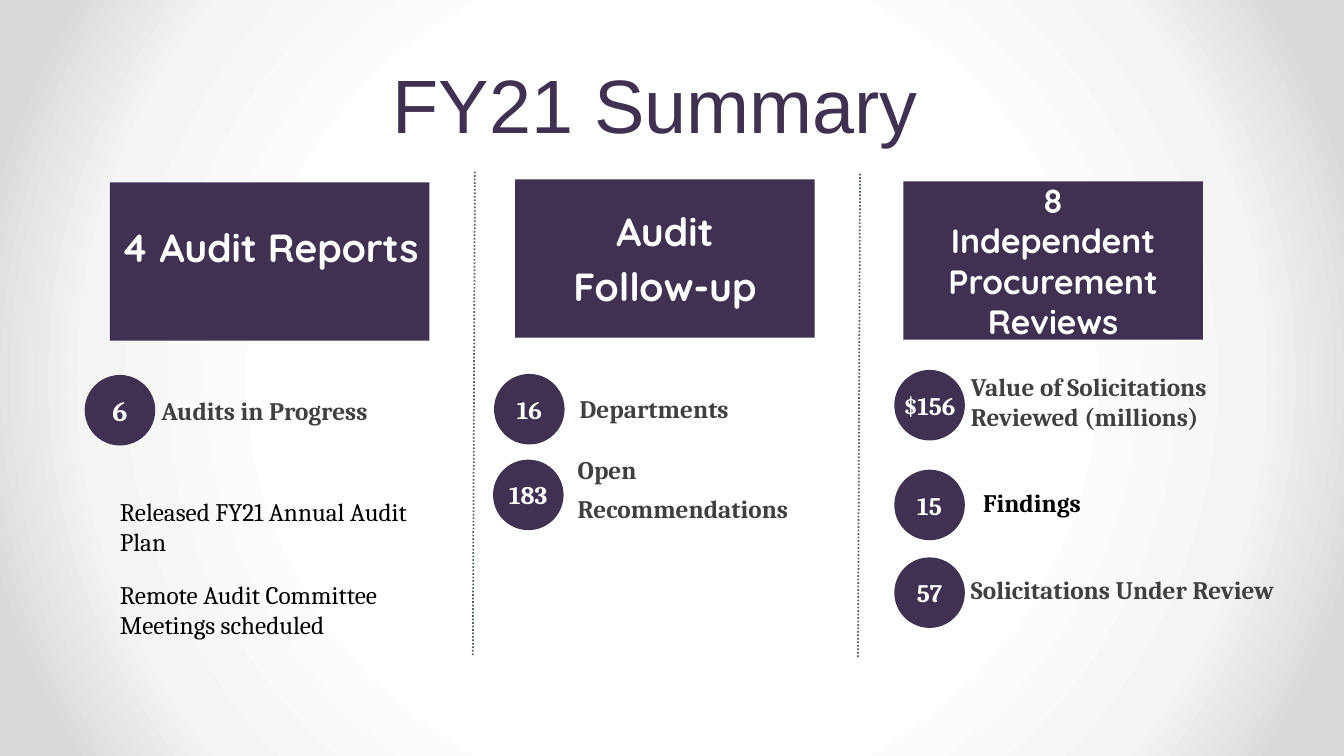
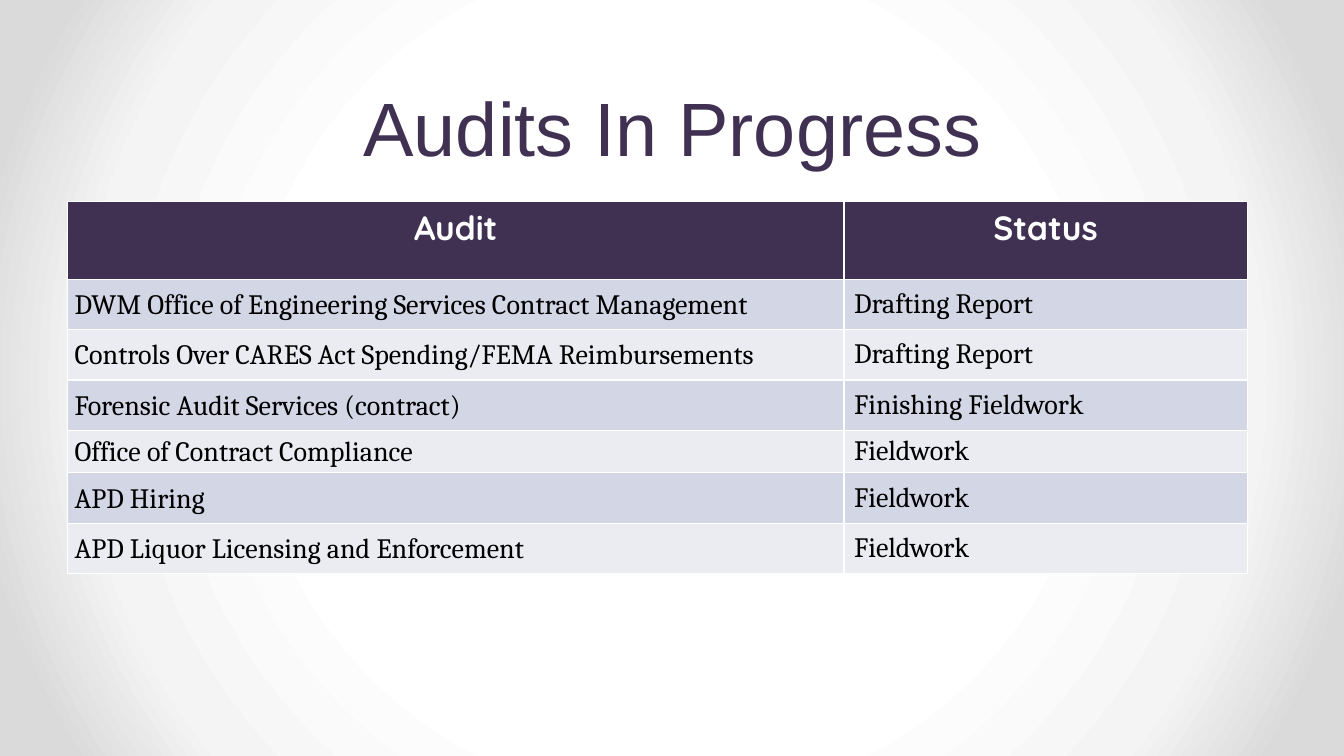
from lxml import etree
from pptx import Presentation
from pptx.dml.color import RGBColor
from pptx.enum.dml import MSO_LINE
from pptx.enum.shapes import MSO_CONNECTOR, MSO_SHAPE
from pptx.enum.text import MSO_ANCHOR, MSO_AUTO_SIZE, PP_ALIGN
from pptx.oxml import parse_xml
from pptx.oxml.ns import nsdecls, qn
from pptx.util import Inches, Pt

COLOURS = {
    "purple": "403152",
    "white": "FFFFFF",
    "black": "000000",
    "grey": "404040",
    "divider": "586064",
    "band_dark": "D2D6E5",
    "band_light": "EAECF2",
}
BACKGROUND_STOPS = [(50, "FFFFFF"), (76, "F4F4F4"), (92, "DADADA")]
TITLE_FONT, HEADING_FONT, BODY_FONT = "Arial", "Quicksand", "Cambria"
CIRCLE_SIZE = 0.7

HEADINGS = [
    (["4 Audit Reports"], 1.09, 1.81, 3.17, 28, 6, 0.35),
    (["Audit", "Follow-up"], 5.11, 1.78, 2.97, 28, 6, 0.05),
    (["8", "Independent Procurement Reviews"], 8.96, 1.8, 2.97, 24, 0, 0.05),
]
FIGURES = [
    ("6", 0.84, 3.72, 20),
    ("16", 4.9, 3.71, 18),
    ("183", 4.89, 4.56, 18),
    ("$156", 8.87, 3.67, 18),
    ("15", 8.87, 4.66, 18),
    ("57", 8.87, 5.53, 18),
]
LABELS = [
    (["Audits in Progress"], 1.6, 3.92, 2.97, 0.3, "grey", True),
    (["Departments"], 5.75, 3.76, 2.29, 0.58, "grey", True),
    (["Open", "Recommendations"], 5.73, 4.56, 2.29, 0.58, "grey", True),
    (["Value of Solicitations Reviewed (millions)"], 9.63, 3.68, 3.2, 0.61, "grey", True),
    (["Findings"], 9.75, 4.78, 1.38, 0.4, "black", True),
    (["Solicitations Under Review"], 9.63, 5.7, 3.2, 0.3, "grey", True),
    (["Released FY21 Annual Audit Plan"], 1.19, 4.87, 2.97, 0.71, "black", False),
    (["Remote Audit Committee Meetings scheduled"], 1.19, 5.69, 2.97, 0.71, "black", False),
]
DIVIDERS = [(4.69, 6.5), (8.51, 6.52)]

AUDITS = [
    ("Audit", "Status"),
    ("DWM Office of Engineering Services Contract Management", "Drafting Report"),
    ("Controls Over CARES Act Spending/FEMA Reimbursements", "Drafting Report"),
    ("Forensic Audit Services (contract)", "Finishing Fieldwork"),
    ("Office of Contract Compliance", "Fieldwork"),
    ("APD Hiring", "Fieldwork"),
    ("APD Liquor Licensing and Enforcement", "Fieldwork"),
]
COLUMN_WIDTHS = [7.7, 4]
ROW_HEIGHTS = [0.77, 0.5, 0.5, 0.5, 0.4, 0.5, 0.5]


def colour(name):
    return RGBColor.from_string(COLOURS[name])


def box(left, top, width, height):
    return Inches(left), Inches(top), Inches(width), Inches(height)


def set_margins(target, left, top, right, bottom):
    target.margin_left, target.margin_top = Inches(left), Inches(top)
    target.margin_right, target.margin_bottom = Inches(right), Inches(bottom)


def write_lines(frame, lines, font_name, size, colour_name, bold=False,
                alignment=PP_ALIGN.LEFT, space_before=0):
    for index, line in enumerate(lines):
        paragraph = frame.add_paragraph() if index else frame.paragraphs[0]
        paragraph.text = line
        paragraph.alignment = alignment
        paragraph.space_before = Pt(space_before)
        font = paragraph.font
        font.name, font.size, font.bold = font_name, Pt(size), bold
        font.color.rgb = colour(colour_name)


def set_background(master):
    fill = master.background.fill
    fill.solid()
    solid = master.element.find(".//" + qn("p:bgPr")).find(qn("a:solidFill"))
    stops = "".join(
        f'<a:gs pos="{position * 1000}"><a:srgbClr val="{value}"/></a:gs>'
        for position, value in BACKGROUND_STOPS
    )
    gradient = parse_xml(
        f'<a:gradFill {nsdecls("a")} rotWithShape="1"><a:gsLst>{stops}</a:gsLst>'
        '<a:path path="circle"><a:fillToRect l="50000" t="50000" r="50000" b="50000"/>'
        "</a:path></a:gradFill>"
    )
    solid.getparent().replace(solid, gradient)


def add_titled_slide(presentation, title, left, top, width, height):
    slide = presentation.slides.add_slide(presentation.slide_layouts[5])
    shape = slide.shapes.title
    shape.left, shape.top, shape.width, shape.height = box(left, top, width, height)
    frame = shape.text_frame
    frame.auto_size = MSO_AUTO_SIZE.NONE
    frame.vertical_anchor = MSO_ANCHOR.BOTTOM
    write_lines(frame, [title], TITLE_FONT, 54, "purple", alignment=PP_ALIGN.CENTER)
    frame.paragraphs[0].line_spacing = Pt(58)
    return slide


def add_purple_shape(slide, kind, left, top, width, height):
    shape = slide.shapes.add_shape(kind, *box(left, top, width, height))
    shape.shadow.inherit = False
    shape.fill.solid()
    shape.fill.fore_color.rgb = colour("purple")
    shape.line.fill.background()
    shape.text_frame.vertical_anchor = MSO_ANCHOR.MIDDLE
    return shape


def add_heading(slide, lines, left, top, width, size, space_before, bottom_margin):
    shape = add_purple_shape(slide, MSO_SHAPE.RECTANGLE, left, top, width, 1.57)
    frame = shape.text_frame
    frame.word_wrap = True
    set_margins(frame, 0.1, 0.05, 0.1, bottom_margin)
    write_lines(frame, lines, HEADING_FONT, size, "white", True,
                PP_ALIGN.CENTER, space_before)


def add_figure(slide, figure, left, top, size):
    shape = add_purple_shape(slide, MSO_SHAPE.OVAL, left, top, CIRCLE_SIZE, CIRCLE_SIZE)
    frame = shape.text_frame
    frame.word_wrap = False
    set_margins(frame, 0, 0, 0, 0)
    write_lines(frame, [figure], BODY_FONT, size, "white", True, PP_ALIGN.CENTER)


def add_label(slide, lines, left, top, width, height, colour_name, bold):
    frame = slide.shapes.add_textbox(*box(left, top, width, height)).text_frame
    frame.word_wrap = True
    frame.vertical_anchor = MSO_ANCHOR.MIDDLE
    set_margins(frame, 0, 0, 0, 0)
    write_lines(frame, lines, BODY_FONT, 18, colour_name, bold, space_before=6)


def add_divider(slide, left, bottom):
    connector = slide.shapes.add_connector(
        MSO_CONNECTOR.STRAIGHT, Inches(left), Inches(bottom),
        Inches(left + 0.02), Inches(bottom - 4.8))
    connector.line.color.rgb = colour("divider")
    connector.line.width = Pt(1.25)
    connector.line.dash_style = MSO_LINE.ROUND_DOT
    etree.SubElement(connector.element.spPr, qn("a:effectLst"))


def format_cell(cell, text, row, column):
    header = row == 0
    fill_name = "purple" if header else "band_dark" if row % 2 else "band_light"
    cell.fill.solid()
    cell.fill.fore_color.rgb = colour(fill_name)
    if header:
        write_lines(cell.text_frame, [text], HEADING_FONT, 24, "white", True,
                    PP_ALIGN.CENTER)
        return
    cell.vertical_anchor = MSO_ANCHOR.MIDDLE
    write_lines(cell.text_frame, [text], BODY_FONT, 20, "black")
    if column == 0:
        set_margins(cell, 0.07, 0, 0.07, 0)
        cell.text_frame.paragraphs[0].line_spacing = 1.07


def add_audit_table(slide):
    frame = slide.shapes.add_table(
        len(AUDITS), len(COLUMN_WIDTHS),
        *box(0.67, 2, sum(COLUMN_WIDTHS), sum(ROW_HEIGHTS)))
    table = frame.table
    for column, width in zip(table.columns, COLUMN_WIDTHS):
        column.width = Inches(width)
    for row, height in zip(table.rows, ROW_HEIGHTS):
        row.height = Inches(height)
    for row, texts in enumerate(AUDITS):
        for column, text in enumerate(texts):
            format_cell(table.cell(row, column), text, row, column)


def main():
    presentation = Presentation()
    presentation.slide_width, presentation.slide_height = Inches(13.33), Inches(7.5)
    set_background(presentation.slide_master)

    summary = add_titled_slide(presentation, "FY21 Summary", 0.5, 0.38, 12, 1.14)
    for add_element, items in [
        (add_heading, HEADINGS),
        (add_divider, DIVIDERS),
        (add_figure, FIGURES),
        (add_label, LABELS),
    ]:
        for item in items:
            add_element(summary, *item)

    progress = add_titled_slide(presentation, "Audits In Progress", 0.67, 0, 12, 1.75)
    add_audit_table(progress)

    presentation.save("out.pptx")


if __name__ == "__main__":
    main()
